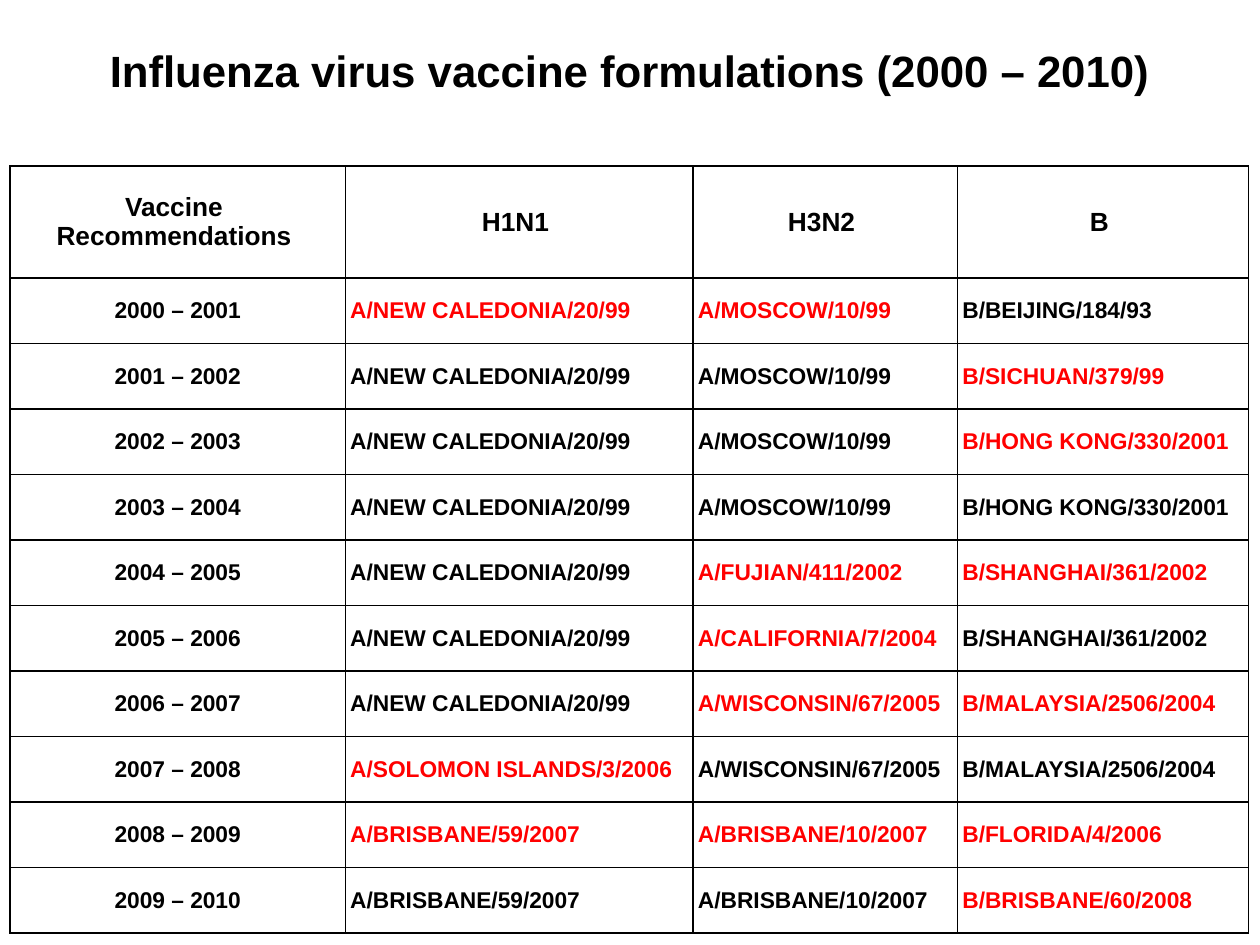
from dataclasses import dataclass

import lxml.etree
import pptx
import pptx.dml.color
import pptx.enum.text
import pptx.oxml.ns
import pptx.util

Cm = pptx.util.Cm
Pt = pptx.util.Pt
RGBColor = pptx.dml.color.RGBColor
PP_ALIGN = pptx.enum.text.PP_ALIGN


@dataclass(frozen=True)
class Theme:
    font: str = "Arial"
    ink: str = "000000"
    changed: str = "FF0000"
    title_size: int = 25
    header_size: int = 15
    body_size: int = 13
    spacer_size: int = 8
    border_width: int = 1


THEME = Theme()
PLAIN_TABLE_STYLE = "{2D5ABB26-0587-4C30-8999-92F81FD0307C}"

TITLE = "Influenza virus vaccine formulations (2000 – 2010)"
HEADERS = ["Vaccine \nRecommendations ", "H1N1 ", "H3N2 ", "B "]
FIRST_SEASON = 2000
STRAINS_BEFORE = ("", "", "B/BEIJING/184/93")
STRAINS = [
    ("A/NEW CALEDONIA/20/99", "A/MOSCOW/10/99", "B/BEIJING/184/93"),
    ("A/NEW CALEDONIA/20/99", "A/MOSCOW/10/99", "B/SICHUAN/379/99"),
    ("A/NEW CALEDONIA/20/99", "A/MOSCOW/10/99", "B/HONG KONG/330/2001"),
    ("A/NEW CALEDONIA/20/99", "A/MOSCOW/10/99", "B/HONG KONG/330/2001"),
    ("A/NEW CALEDONIA/20/99", "A/FUJIAN/411/2002", "B/SHANGHAI/361/2002"),
    ("A/NEW CALEDONIA/20/99", "A/CALIFORNIA/7/2004", "B/SHANGHAI/361/2002"),
    ("A/NEW CALEDONIA/20/99", "A/WISCONSIN/67/2005", "B/MALAYSIA/2506/2004"),
    ("A/SOLOMON ISLANDS/3/2006", "A/WISCONSIN/67/2005", "B/MALAYSIA/2506/2004"),
    ("A/BRISBANE/59/2007", "A/BRISBANE/10/2007", "B/FLORIDA/4/2006"),
    ("A/BRISBANE/59/2007", "A/BRISBANE/10/2007", "B/BRISBANE/60/2008"),
]
COLUMN_WIDTHS = [6.76, 7.01, 5.33, 5.87]
ROW_HEIGHTS = [2.06, 0.86, 2.26] + [1.32] * len(STRAINS)
TITLE_ROW, SPACER_ROW, HEADER_ROW, FIRST_STRAIN_ROW = range(4)


def set_borders(cell, sides):
    """Draw the given sides (L, R, T, B) and leave the others without a line."""
    properties = cell._tc.get_or_add_tcPr()
    for index, side in enumerate("LRTB"):
        line = lxml.etree.Element(pptx.oxml.ns.qn(f"a:ln{side}"))
        if side in sides:
            line.set("w", str(Pt(THEME.border_width)))
            fill = lxml.etree.SubElement(line, pptx.oxml.ns.qn("a:solidFill"))
            color = lxml.etree.SubElement(fill, pptx.oxml.ns.qn("a:srgbClr"))
            color.set("val", THEME.ink)
        else:
            lxml.etree.SubElement(line, pptx.oxml.ns.qn("a:noFill"))
        properties.insert(index, line)


def fill_cell(cell, text, size, sides="LRTB", color=THEME.ink, alignment=PP_ALIGN.CENTER):
    cell.text = text
    cell.fill.background()
    cell.vertical_anchor = pptx.enum.text.MSO_ANCHOR.MIDDLE
    cell.margin_left = cell.margin_right = Cm(0.1)
    cell.margin_top = cell.margin_bottom = Cm(0.1)
    for paragraph in cell.text_frame.paragraphs:
        paragraph.alignment = alignment
        paragraph.font.name = THEME.font
        paragraph.font.size = Pt(size)
        paragraph.font.bold = True
        paragraph.font.color.rgb = RGBColor.from_string(color)
    set_borders(cell, sides)


def add_vaccine_table(slide, left, top):
    """Strains that differ from the season before are shown in the changed colour."""
    frame = slide.shapes.add_table(
        len(ROW_HEIGHTS), len(COLUMN_WIDTHS), left, top,
        Cm(sum(COLUMN_WIDTHS)), Cm(sum(ROW_HEIGHTS)),
    )
    table = frame.table
    table.first_row = table.horz_banding = False
    table._tbl.tblPr.find(pptx.oxml.ns.qn("a:tableStyleId")).text = PLAIN_TABLE_STYLE
    for column, width in zip(table.columns, COLUMN_WIDTHS):
        column.width = Cm(width)
    for row, height in zip(table.rows, ROW_HEIGHTS):
        row.height = Cm(height)

    last_column = len(COLUMN_WIDTHS) - 1
    table.cell(TITLE_ROW, 0).merge(table.cell(TITLE_ROW, last_column))
    fill_cell(table.cell(TITLE_ROW, 0), TITLE, THEME.title_size, sides="")
    for column, header in enumerate(HEADERS):
        fill_cell(table.cell(SPACER_ROW, column), "", THEME.spacer_size, sides="B")
        fill_cell(table.cell(HEADER_ROW, column), header, THEME.header_size)

    previous_strains = STRAINS_BEFORE
    for index, strains in enumerate(STRAINS):
        row = FIRST_STRAIN_ROW + index
        year = FIRST_SEASON + index
        fill_cell(table.cell(row, 0), f"{year} – {year + 1}", THEME.body_size)
        for column, (strain, previous) in enumerate(zip(strains, previous_strains), start=1):
            color = THEME.ink if strain == previous else THEME.changed
            fill_cell(table.cell(row, column), strain, THEME.body_size,
                      color=color, alignment=PP_ALIGN.LEFT)
        previous_strains = strains


def main():
    presentation = pptx.Presentation()
    presentation.slide_width = Cm(25.4)
    presentation.slide_height = Cm(19.05)
    slide = presentation.slides.add_slide(presentation.slide_layouts[6])
    add_vaccine_table(slide, Cm(0.2), Cm(0.43))
    presentation.save("out.pptx")


if __name__ == "__main__":
    main()
